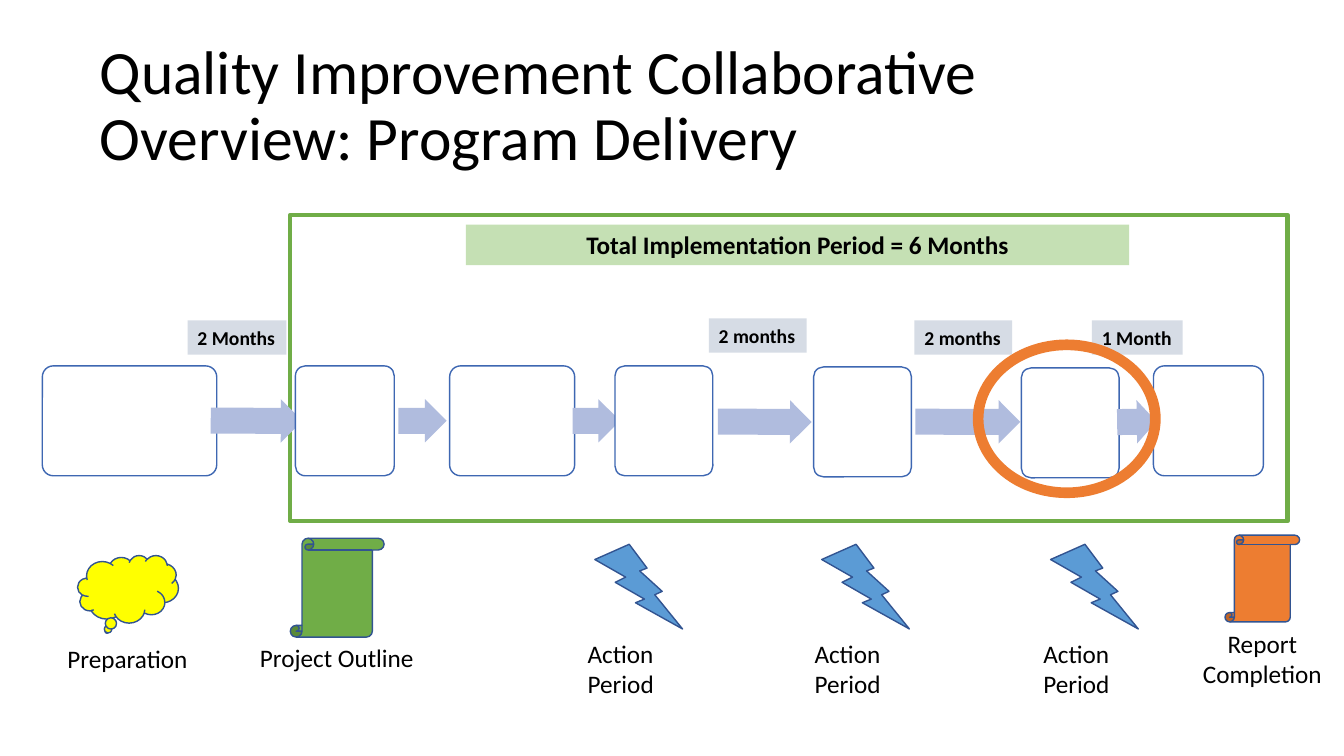
from dataclasses import dataclass

from pptx import Presentation
from pptx.dml.color import RGBColor
from pptx.enum.shapes import MSO_SHAPE
from pptx.enum.text import MSO_ANCHOR, MSO_AUTO_SIZE, PP_ALIGN
from pptx.util import Inches, Pt


@dataclass(frozen=True)
class Theme:
    font: str = "Calibri"
    title_size: int = 44
    label_size: int = 18
    duration_size: int = 14
    black: str = "000000"
    white: str = "FFFFFF"
    green: str = "70AD47"
    pale_green: str = "C5E0B4"
    orange: str = "ED7D31"
    red: str = "C00000"
    yellow: str = "FFFF00"
    blue: str = "5B9BD5"
    step_line: str = "3E67B2"
    icon_line: str = "325491"
    arrow: str = "B0BCDE"
    grey: str = "D6DCE5"


THEME = Theme()

# left, top, width of each step box
STEPS = [
    (0.42, 3.63, 1.73),
    (2.93, 3.63, 0.98),
    (4.46, 3.63, 1.24),
    (6.1, 3.63, 0.97),
    (8.07, 3.64, 0.97),
    (10.13, 3.65, 0.97),
    (11.44, 3.63, 1.09),
]
# left, top, width, rotation of the arrow after each step
ARROWS = [
    (2.09, 3.96, 0.91, 0.2),
    (3.95, 3.96, 0.48, 0),
    (5.68, 3.96, 0.47, 359.9),
    (7.12, 3.97, 0.93, 0.3),
    (9.08, 3.97, 1.04, 0.1),
    (11.08, 3.97, 0.39, 359.2),
]
DURATIONS = [
    ("2 Months", 1.86, 3.18, 0.98),
    ("2 months", 7.03, 3.16, 0.97),
    ("2 months", 9.07, 3.18, 0.97),
    ("1 Month", 10.83, 3.18, 0.9),
]
ACTION_LEFTS = [5.73, 7.98, 10.25]


def add_figure(shapes, kind, area, fill, line=None, line_width=1, adjustments=()):
    figure = shapes.add_shape(kind, *map(Inches, area))
    figure.shadow.inherit = False
    figure.fill.solid()
    figure.fill.fore_color.rgb = RGBColor.from_string(fill)
    if line:
        figure.line.color.rgb = RGBColor.from_string(line)
        figure.line.width = Pt(line_width)
    else:
        figure.line.fill.background()
    for index, value in enumerate(adjustments):
        figure.adjustments[index] = value
    return figure


def add_text(shapes, lines, area, size, bold=False, align=PP_ALIGN.LEFT,
             wrap=False, fill=None):
    box = shapes.add_textbox(*map(Inches, area))
    if fill:
        box.fill.solid()
        box.fill.fore_color.rgb = RGBColor.from_string(fill)
    frame = box.text_frame
    frame.word_wrap = wrap
    frame.text = "\n".join(lines)
    for para in frame.paragraphs:
        para.alignment = align
        para.font.name = THEME.font
        para.font.size = Pt(size)
        para.font.bold = bold
        para.font.color.rgb = RGBColor.from_string(THEME.black)
    return box


def add_title(shapes):
    title = add_text(
        shapes, ["Quality Improvement Collaborative Overview: Program Delivery"],
        (0.89, 0.34, 11.5, 1.45), THEME.title_size, wrap=True)
    title.text_frame.vertical_anchor = MSO_ANCHOR.MIDDLE
    title.text_frame.paragraphs[0].line_spacing = 0.9


def add_process(shapes):
    """Draw steps and arrows alternately, so each step covers the arrow tip before it."""
    process = shapes.add_group_shape().shapes
    for index, (left, top, width) in enumerate(STEPS):
        add_figure(process, MSO_SHAPE.ROUNDED_RECTANGLE, (left, top, width, 1.09),
                   THEME.white, THEME.step_line, adjustments=(0.1,))
        if index < len(ARROWS):
            left, top, width, rotation = ARROWS[index]
            arrow = add_figure(process, MSO_SHAPE.RIGHT_ARROW, (left, top, width, 0.43),
                               THEME.arrow, adjustments=(0.6, 0.5))
            arrow.rotation = rotation


def add_durations(shapes):
    for text, left, top, width in DURATIONS:
        label = add_text(shapes, [text], (left, top, width, 0.34),
                         THEME.duration_size, bold=True, fill=THEME.grey)
        label.text_frame.auto_size = MSO_AUTO_SIZE.SHAPE_TO_FIT_TEXT
    add_text(shapes, ["Total Implementation Period = 6 Months"],
             (4.62, 2.23, 6.58, 0.4), THEME.label_size, bold=True,
             align=PP_ALIGN.CENTER, wrap=True, fill=THEME.pale_green)


def add_captioned_icon(shapes, kind, icon_area, fill, lines, text_area,
                       align=PP_ALIGN.LEFT, wrap=False):
    group = shapes.add_group_shape().shapes
    add_figure(group, kind, icon_area, fill, THEME.icon_line)
    add_text(group, lines, text_area, THEME.label_size, align=align, wrap=wrap)


def add_icons(shapes):
    add_captioned_icon(shapes, MSO_SHAPE.CLOUD_CALLOUT, (0.77, 5.51, 1, 0.67),
                       THEME.yellow, ["Preparation"], (0.57, 6.33, 1.41, 0.4))
    add_captioned_icon(shapes, MSO_SHAPE.VERTICAL_SCROLL, (2.88, 5.34, 0.93, 0.98),
                       THEME.green, ["Project Outline"], (2.48, 6.32, 1.74, 0.4))
    for left in ACTION_LEFTS:
        add_captioned_icon(shapes, MSO_SHAPE.LIGHTNING_BOLT,
                           (left + 0.17, 5.4, 0.87, 0.84), THEME.blue,
                           ["Action Period"], (left, 6.28, 1.38, 0.34), wrap=True)
    add_captioned_icon(shapes, MSO_SHAPE.VERTICAL_SCROLL, (12.15, 5.31, 0.74, 0.86),
                       THEME.orange, ["Report", "Completion"],
                       (11.82, 6.18, 1.4, 0.71), align=PP_ALIGN.CENTER)


def main():
    deck = Presentation()
    deck.slide_width, deck.slide_height = Inches(13.33), Inches(7.5)
    shapes = deck.slides.add_slide(deck.slide_layouts[6]).shapes
    add_figure(shapes, MSO_SHAPE.RECTANGLE, (2.88, 2.13, 9.89, 3.04),
               THEME.white, THEME.green, 3)
    add_process(shapes)
    add_durations(shapes)
    add_icons(shapes)
    add_title(shapes)
    add_figure(shapes, MSO_SHAPE.DONUT, (9.69, 3.41, 1.78, 1.49),
               THEME.red, THEME.orange, 6, (0.015,))
    deck.save("out.pptx")


if __name__ == "__main__":
    main()
